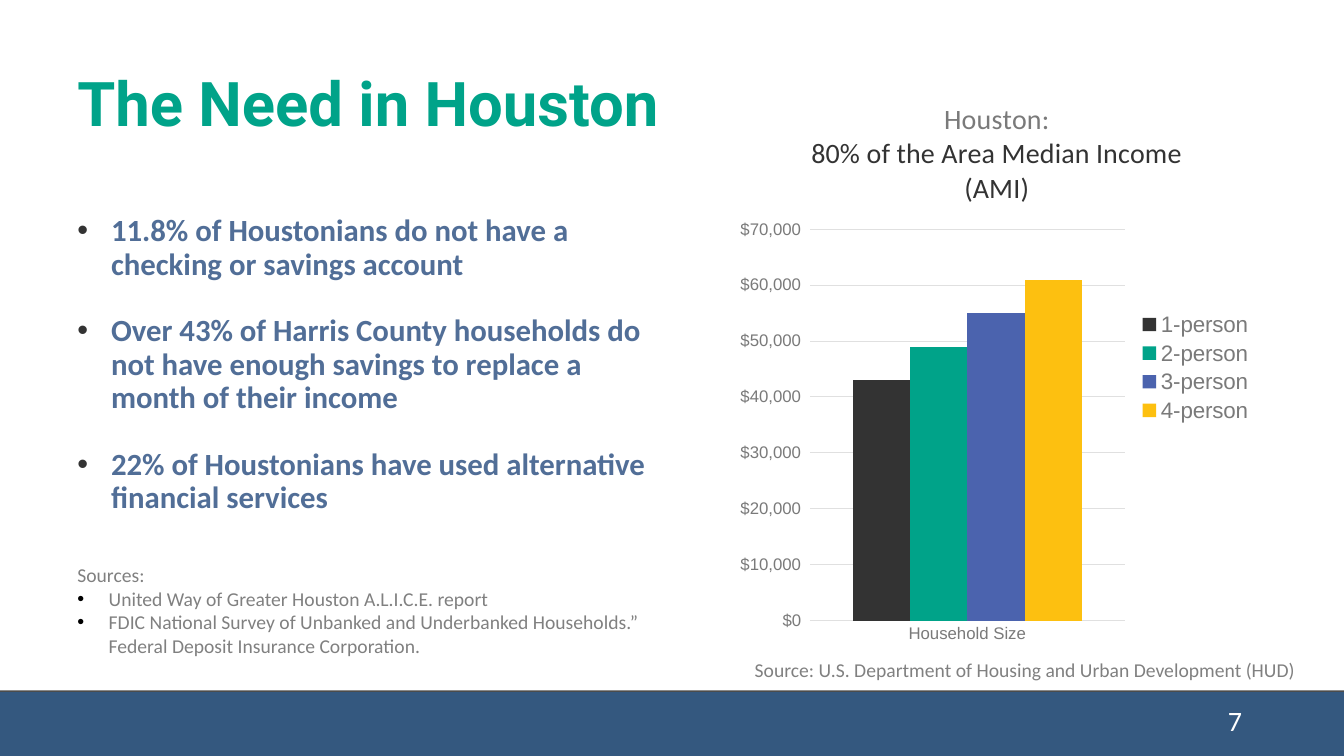
from dataclasses import dataclass

from lxml import etree
from pptx import Presentation
from pptx.chart.data import CategoryChartData
from pptx.dml.color import RGBColor
from pptx.enum.chart import XL_CHART_TYPE, XL_LEGEND_POSITION, XL_TICK_MARK
from pptx.enum.shapes import MSO_SHAPE
from pptx.enum.text import MSO_ANCHOR, PP_ALIGN
from pptx.oxml import parse_xml
from pptx.oxml.ns import nsdecls, qn
from pptx.util import Cm, Pt

COLUMNS = XL_CHART_TYPE.COLUMN_CLUSTERED
LEGEND_RIGHT = XL_LEGEND_POSITION.RIGHT
NO_TICK = XL_TICK_MARK.NONE
RECTANGLE = MSO_SHAPE.RECTANGLE
TOP, MIDDLE = MSO_ANCHOR.TOP, MSO_ANCHOR.MIDDLE
LEFT, CENTER, RIGHT = PP_ALIGN.LEFT, PP_ALIGN.CENTER, PP_ALIGN.RIGHT


@dataclass(frozen=True)
class Theme:
    green: str = "00A389"
    slate: str = "516E97"
    navy: str = "34587F"
    edge: str = "4C4C4C"
    dark: str = "333333"
    black: str = "000000"
    white: str = "FFFFFF"
    source_gray: str = "808080"
    chart_gray: str = "7A7A7A"
    grid: str = "E0E0E0"
    bars: tuple = ("333333", "00A389", "4B63AE", "FDC010")
    heading_font: str = "Roboto"
    body_font: str = "Calibri"
    chart_font: str = "Arial"
    heading_size: int = 44
    body_size: int = 22
    number_size: int = 20
    chart_title_size: int = 20
    legend_size: int = 16
    source_size: int = 14
    axis_size: int = 12
    chart_size: int = 10


class SlideBuilder:
    def __init__(self, slide, theme):
        self.slide = slide
        self.theme = theme

    def style(self, font, face, size, color, bold=False):
        font.name, font.size, font.bold = face, Pt(size), bold
        font.color.rgb = RGBColor.from_string(color)

    def band(self, top, height, color):
        band = self.slide.shapes.add_shape(
            RECTANGLE, 0, Cm(top), Cm(33.87), Cm(height))
        band.shadow.inherit = False
        band.fill.solid()
        band.fill.fore_color.rgb = RGBColor.from_string(color)
        band.line.fill.background()

    def text(self, box, lines, face, size, color, bold=False, anchor=TOP,
             align=LEFT, spacing=1.0, gap=0, bullet=None, indent=0, plain=0):
        """Lines after the first `plain` ones get a bullet, if one is given."""
        frame = self.slide.shapes.add_textbox(*map(Cm, box)).text_frame
        frame.word_wrap = True
        frame.vertical_anchor = anchor
        for index, line in enumerate(lines):
            paragraph = frame.paragraphs[0] if index == 0 else frame.add_paragraph()
            paragraph.text = line
            paragraph.alignment = align
            paragraph.line_spacing = spacing
            if index and gap:
                paragraph.space_before = Pt(gap)
            if bullet and index >= plain:
                self.bullet(paragraph, bullet, indent)
            self.style(paragraph.font, face, size, color, bold)

    def bullet(self, paragraph, color, indent):
        properties = paragraph._p.get_or_add_pPr()
        properties.set("marL", str(Cm(indent)))
        properties.set("indent", str(-Cm(indent)))
        for xml in (
            f'<a:buClr {nsdecls("a")}><a:srgbClr val="{color}"/></a:buClr>',
            f'<a:buFont {nsdecls("a")} typeface="Arial"/>',
            f'<a:buChar {nsdecls("a")} char="•"/>',
        ):
            properties.append(parse_xml(xml))

    def column_chart(self, box, title_lines, category, values, number_format):
        theme = self.theme
        data = CategoryChartData(number_format=number_format)
        data.categories = [category]
        for name, value in values.items():
            data.add_series(name, [value])
        chart = self.slide.shapes.add_chart(COLUMNS, *map(Cm, box), data).chart
        self.style(chart.font, theme.chart_font, theme.chart_size, theme.dark)

        # Chart title
        chart.has_title = True
        title = chart.chart_title.text_frame
        for index, (line, color) in enumerate(title_lines):
            paragraph = title.paragraphs[0] if index == 0 else title.add_paragraph()
            paragraph.text = line
            paragraph.alignment = CENTER
            self.style(paragraph.font, theme.body_font,
                       theme.chart_title_size, color)

        # Columns
        plot = chart.plots[0]
        plot.gap_width, plot.overlap = 150, 0
        plot.vary_by_categories = False
        for series, color in zip(plot.series, theme.bars):
            series.format.fill.solid()
            series.format.fill.fore_color.rgb = RGBColor.from_string(color)

        # Axes
        for axis in (chart.category_axis, chart.value_axis):
            axis.major_tick_mark = axis.minor_tick_mark = NO_TICK
            self.style(axis.tick_labels.font, theme.chart_font,
                       theme.axis_size, theme.chart_gray)
        amounts = chart.value_axis
        amounts.minimum_scale, amounts.maximum_scale = 0, 70000
        amounts.major_unit = 10000
        amounts.tick_labels.number_format = number_format
        amounts.tick_labels.number_format_is_linked = False
        amounts.format.line.fill.background()
        for line in (chart.category_axis.format.line,
                     amounts.major_gridlines.format.line):
            line.color.rgb = RGBColor.from_string(theme.grid)
            line.width = Pt(0.75)

        # Legend
        chart.has_legend = True
        chart.legend.position = LEGEND_RIGHT
        chart.legend.include_in_layout = False
        self.style(chart.legend.font, theme.chart_font,
                   theme.legend_size, theme.chart_gray)
        self.plot_layout(chart, x=0.15, y=0.26, w=0.59, h=0.68)

    def plot_layout(self, chart, **fractions):
        area = chart._chartSpace.chart.plotArea
        for old in area.findall(qn("c:layout")):
            area.remove(old)
        layout = etree.Element(qn("c:layout"))
        manual = etree.SubElement(layout, qn("c:manualLayout"))
        settings = {"layoutTarget": "inner", "xMode": "edge", "yMode": "edge"}
        for tag, value in {**settings, **fractions}.items():
            etree.SubElement(manual, qn(f"c:{tag}")).set("val", str(value))
        area.insert(0, layout)


def main():
    deck = Presentation()
    deck.slide_width, deck.slide_height = Cm(33.87), Cm(19.05)
    theme = Theme()
    page = SlideBuilder(deck.slides.add_slide(deck.slide_layouts[6]), theme)

    # Footer band with page number
    page.band(17.4, 1.65, theme.edge)
    page.band(17.44, 1.61, theme.navy)
    page.text((23.93, 17.65, 7.62, 1.02), ["7"], theme.body_font,
              theme.number_size, theme.white, anchor=MIDDLE, align=RIGHT)

    # Heading and key facts
    page.text((1.7, 0.97, 30.48, 3.18), ["The Need in Houston"],
              theme.heading_font, theme.heading_size, theme.green,
              bold=True, anchor=MIDDLE)
    facts = [
        "11.8% of Houstonians do not have a checking or savings account",
        "Over 43% of Harris County households do not have enough savings "
        "to replace a month of their income",
        "22% of Houstonians have used alternative financial services",
    ]
    page.text((1.7, 5.3, 14.91, 8), facts, theme.body_font, theme.body_size,
              theme.slate, bold=True, spacing=0.9, gap=24,
              bullet=theme.dark, indent=0.85)

    # Income limits by household size
    page.column_chart(
        (18.39, 2.01, 13.46, 14.5),
        [("Houston:", theme.chart_gray),
         ("80% of the Area Median Income (AMI)", theme.dark)],
        "Household Size",
        {"1-person": 43000, "2-person": 49000,
         "3-person": 55000, "4-person": 61000},
        r'"$"#,##0_);[Red]\("$"#,##0\)')

    # Sources
    page.text((18.77, 16.51, 14.4, 0.79),
              ["Source: U.S. Department of Housing and Urban Development (HUD)"],
              theme.body_font, theme.source_size, theme.source_gray, spacing=0.9)
    sources = [
        "Sources:",
        "United Way of Greater Houston A.L.I.C.E. report",
        "FDIC National Survey of Unbanked and Underbanked Households.” "
        "Federal Deposit Insurance Corporation.",
    ]
    page.text((1.7, 14.07, 15.37, 2.64), sources, theme.body_font,
              theme.source_size, theme.source_gray,
              bullet=theme.black, indent=0.79, plain=1)

    deck.save("out.pptx")


if __name__ == "__main__":
    main()
